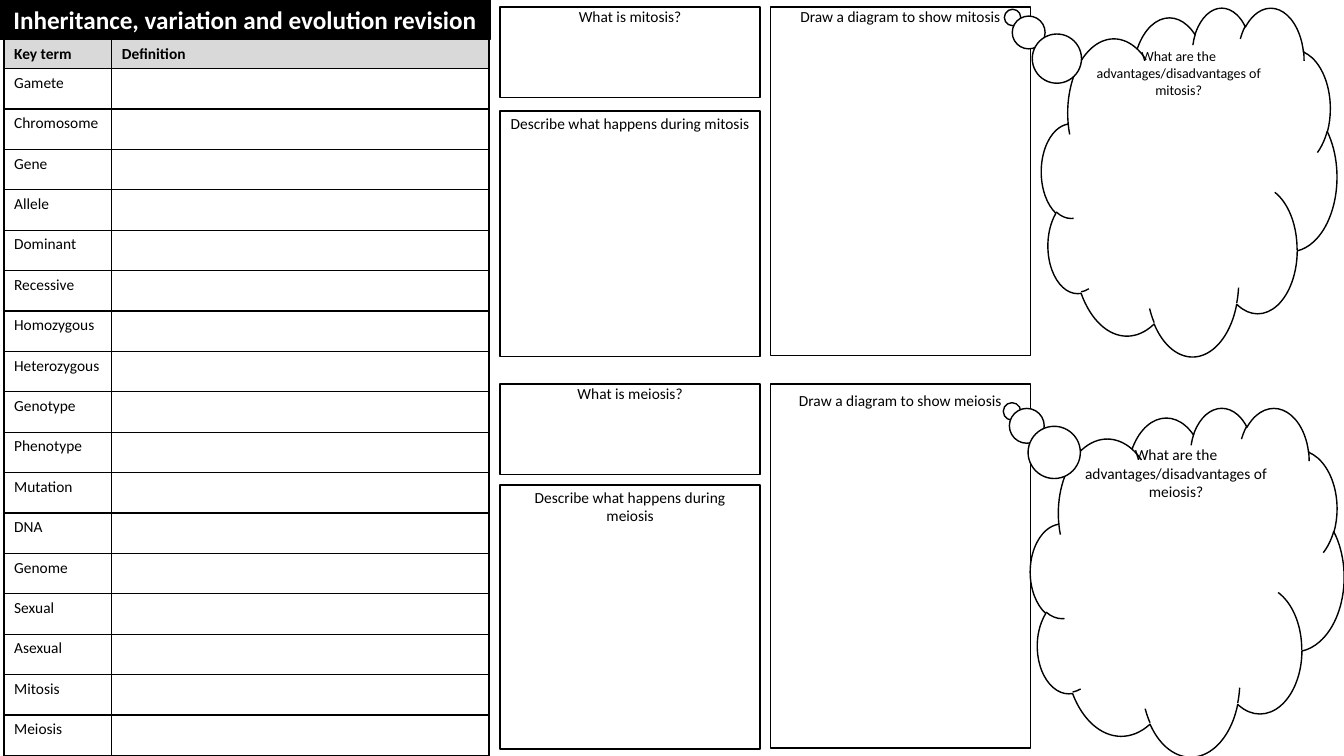
from lxml import etree
from pptx import Presentation
from pptx.dml.color import RGBColor
from pptx.enum.shapes import MSO_SHAPE as Preset
from pptx.enum.text import MSO_ANCHOR as Anchor, MSO_AUTO_SIZE as AutoSize, PP_ALIGN as Align
from pptx.oxml.ns import qn
from pptx.util import Inches, Pt

COLORS = {"black": "000000", "white": "FFFFFF", "grey": "D9D9D9"}
FONT = "Calibri"
TERMS = [
    "Gamete", "Chromosome", "Gene", "Allele", "Dominant", "Recessive",
    "Homozygous", "Heterozygous", "Genotype", "Phenotype", "Mutation", "DNA",
    "Genome", "Sexual", "Asexual", "Mitosis", "Meiosis",
]
BOX_WIDTH = 2.58
LEFT_BOXES, RIGHT_BOXES = 4.96, 7.64


def color(name):
    return RGBColor.from_string(COLORS[name])


def write(frame, text, size=11, bold=False, ink="black", align=Align.CENTER):
    frame.word_wrap = True
    paragraph = frame.paragraphs[0]
    paragraph.alignment = align
    paragraph.line_spacing = 1.0
    run = paragraph.add_run()
    run.text = text
    run.font.name = FONT
    run.font.size = Pt(size)
    run.font.bold = bold
    run.font.color.rgb = color(ink)


class Worksheet:
    def __init__(self, presentation):
        self.slide = presentation.slides.add_slide(presentation.slide_layouts[5])

    def paint(self, shape, fill):
        shape.fill.solid()
        shape.fill.fore_color.rgb = color(fill)
        shape.line.color.rgb = color("black")
        shape.line.width = Pt(1)

    def title(self, text, left, top, width, height):
        shape = self.slide.shapes.title
        shape.left, shape.top = Inches(left), Inches(top)
        shape.width, shape.height = Inches(width), Inches(height)
        self.paint(shape, "black")
        frame = shape.text_frame
        frame.auto_size = AutoSize.NONE
        frame.vertical_anchor = Anchor.MIDDLE
        write(frame, text, size=18, bold=True, ink="white")

    def shape(self, preset, left, top, width, height):
        shape = self.slide.shapes.add_shape(
            preset, Inches(left), Inches(top), Inches(width), Inches(height))
        shape.shadow.inherit = False
        self.paint(shape, "white")
        return shape

    def box(self, text, left, top, height, inset):
        frame = self.shape(Preset.RECTANGLE, left, top, BOX_WIDTH, height).text_frame
        frame.vertical_anchor = Anchor.TOP
        frame.margin_top = Inches(inset)
        write(frame, text)

    def cloud(self, text, left, top, width, tail, inset, size):
        shape = self.shape(Preset.CLOUD_CALLOUT, left, top, width, 3.46)
        shape.adjustments[0], shape.adjustments[1] = tail
        frame = shape.text_frame
        frame.vertical_anchor = Anchor.BOTTOM
        frame.margin_top = 0
        frame.margin_bottom = Inches(inset)
        write(frame, text, size=size)

    def border(self, cell):
        properties = cell._tc.get_or_add_tcPr()
        for index, side in enumerate(("a:lnL", "a:lnR", "a:lnT", "a:lnB")):
            line = etree.Element(qn(side), w=str(Pt(1)))
            fill = etree.SubElement(line, qn("a:solidFill"))
            etree.SubElement(fill, qn("a:srgbClr"), val=COLORS["black"])
            properties.insert(index, line)

    def table(self, rows, left, top, widths, header_height, height):
        table = self.slide.shapes.add_table(
            len(rows), len(widths), Inches(left), Inches(top),
            Inches(sum(widths)), Inches(height)).table
        table.first_row = table.horz_banding = False
        for column, width in zip(table.columns, widths):
            column.width = Inches(width)
        row_height = (height - header_height) / (len(rows) - 1)
        for index, texts in enumerate(rows):
            header = index == 0
            table.rows[index].height = Inches(header_height if header else row_height)
            for cell, text in zip(table.rows[index].cells, texts):
                cell.margin_bottom = 0
                cell.fill.solid()
                cell.fill.fore_color.rgb = color("grey" if header else "white")
                self.border(cell)
                if text:
                    write(cell.text_frame, text, bold=header, align=Align.LEFT)


def main():
    presentation = Presentation()
    presentation.slide_width, presentation.slide_height = Inches(13.33), Inches(7.5)
    sheet = Worksheet(presentation)
    sheet.title("Inheritance, variation and evolution revision", 0, 0, 4.86, 0.39)
    rows = [("Key term", "Definition")] + [(term, "") for term in TERMS]
    sheet.table(rows, 0.04, 0.39, (1.07, 3.74), 0.29, 7.11)

    divisions = [
        ("mitosis", 0.07, 1.1, 2.44, 3.46, 0),
        ("meiosis", 3.81, 4.81, 2.62, 3.61, 0.07),
    ]
    for name, top, describe_top, describe_height, draw_height, draw_inset in divisions:
        sheet.box(f"What is {name}?", LEFT_BOXES, top, 0.9, 0)
        sheet.box(f"Describe what happens during {name}",
                  LEFT_BOXES, describe_top, describe_height, 0.03)
        sheet.box(f"Draw a diagram to show {name}",
                  RIGHT_BOXES, top, draw_height, draw_inset)

    clouds = [
        ("mitosis", 10.33, 0.07, 2.93, (-0.598, -0.47), 1.87, 10),
        ("meiosis", 10.22, 4.04, 3.11, (-0.559, -0.488), 1.85, 11),
    ]
    for name, *layout in clouds:
        sheet.cloud(f"What are the advantages/disadvantages of {name}?", *layout)

    presentation.save("out.pptx")


if __name__ == "__main__":
    main()
